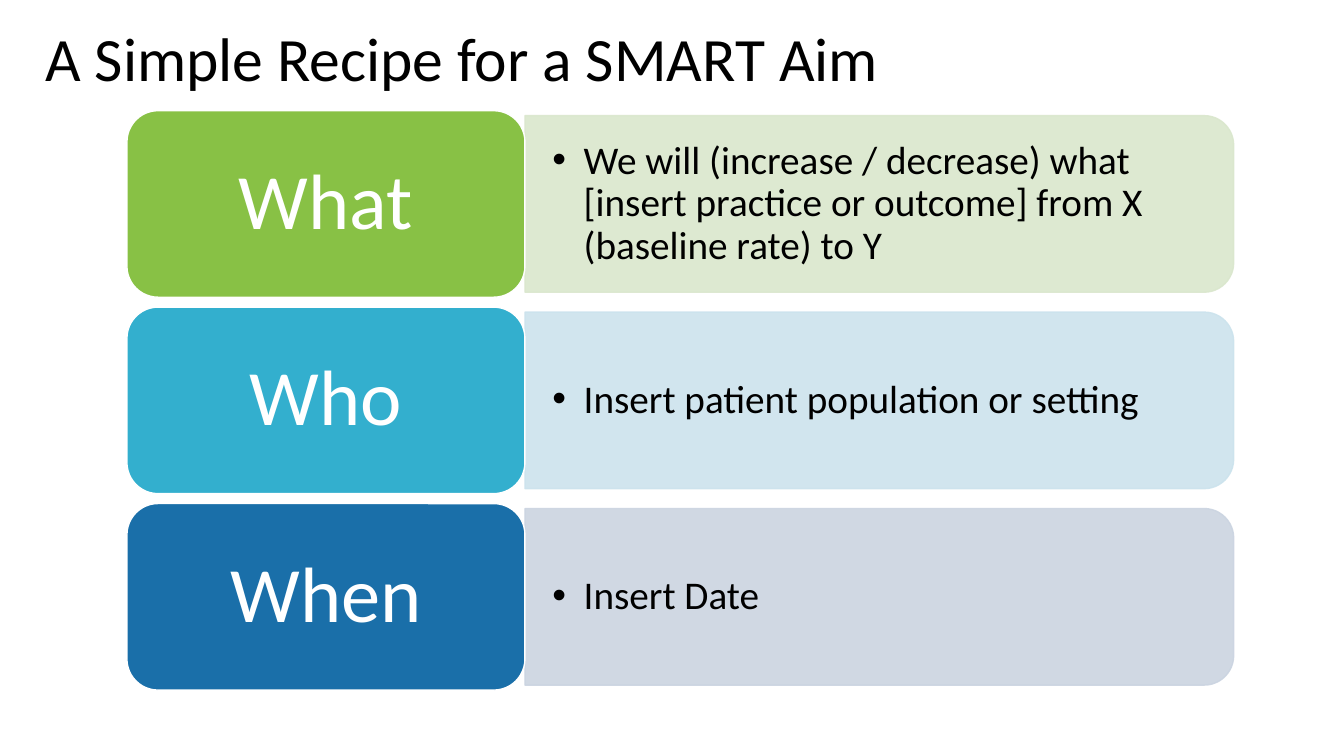
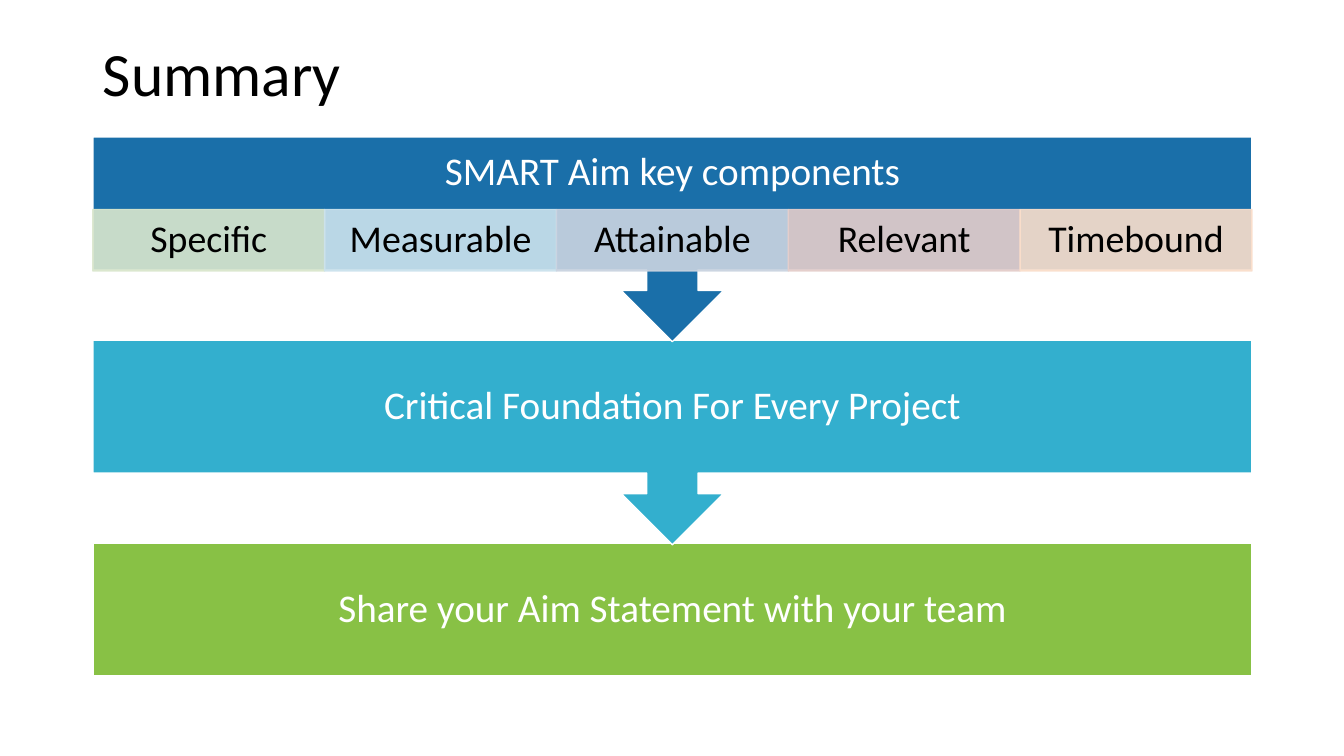
from dataclasses import dataclass
from typing import Any, NamedTuple, Optional

from lxml.etree import SubElement
from pptx import Presentation
from pptx.dml.color import RGBColor
from pptx.enum.shapes import MSO_SHAPE as Preset
from pptx.enum.text import MSO_ANCHOR as Anchor, MSO_AUTO_SIZE as AutoSize, PP_ALIGN as Align
from pptx.oxml.ns import qn
from pptx.util import Cm, Pt

FONT = "Calibri"
BLACK, WHITE = "000000", "FFFFFF"
GREEN, TEAL, BLUE = "88C145", "33AFCE", "1A6FA9"
PALE_GREEN, PALE_TEAL, PALE_BLUE = "DAE7CD", "CCE3ED", "CBD4E1"
PALE_RED, PALE_ORANGE = "E5CECB", "FADECB"
CORNER = 0.167
TINT_OPACITY = 90


class Box(NamedTuple):
    left: float
    top: float
    width: float
    height: float

    def lengths(self) -> list[Cm]:
        return [Cm(value) for value in self]


class Margins(NamedTuple):
    left: float
    top: float
    right: float
    bottom: float


@dataclass(frozen=True)
class TextStyle:
    size: float
    color: str
    margins: Margins
    align: Align = Align.CENTER
    anchor: Anchor = Anchor.MIDDLE
    spacing: float = 0.9
    bullet_indent: float = 0


@dataclass(frozen=True)
class RecipeStep:
    label: str
    detail: str
    color: str
    tint: str


@dataclass(frozen=True)
class Component:
    label: str
    tint: str


@dataclass(frozen=True)
class Stage:
    text: str
    color: str
    preset: Preset
    height: float
    adjustments: tuple[float, ...] = ()
    reserved: float = 0


COMPONENT_HEIGHT = 1.55
BLOCK_HEIGHT, CALLOUT_HEIGHT = 3.35, 5.16
CALLOUT = (0.25, 0.25, 0.25, 0.65)

TITLE_MARGINS = Margins(0.25, 0.13, 0.25, 0.13)
LABEL_STYLE = TextStyle(56, WHITE, Margins(0.8, 0.5, 0.8, 0.5))
DETAIL_STYLE = TextStyle(28, BLACK, Margins(0.69, 0.36, 0.69, 0.36), Align.LEFT, bullet_indent=0.79)
COMPONENT_STYLE = TextStyle(27, BLACK, Margins(0.53, 0.1, 0.53, 0.1))

STEPS = [
    RecipeStep("What", "We will (increase / decrease) what [insert practice or outcome] "
               "from X (baseline rate) to Y", GREEN, PALE_GREEN),
    RecipeStep("Who", "Insert patient population or setting", TEAL, PALE_TEAL),
    RecipeStep("When", "Insert Date", BLUE, PALE_BLUE),
]
COMPONENTS = [
    Component("Specific", PALE_GREEN),
    Component("Measurable", PALE_TEAL),
    Component("Attainable", PALE_BLUE),
    Component("Relevant", PALE_RED),
    Component("Timebound", PALE_ORANGE),
]
STAGES = [
    Stage("SMART Aim key components", BLUE, Preset.DOWN_ARROW_CALLOUT, CALLOUT_HEIGHT,
          CALLOUT, COMPONENT_HEIGHT),
    Stage("Critical Foundation For Every Project", TEAL, Preset.DOWN_ARROW_CALLOUT,
          CALLOUT_HEIGHT, CALLOUT),
    Stage("Share your Aim Statement with your team", GREEN, Preset.RECTANGLE, BLOCK_HEIGHT),
]


def rgb(color: str) -> RGBColor:
    return RGBColor.from_string(color)


def set_values(target: Any, values: dict[str, Any]) -> None:
    for name, value in values.items():
        setattr(target, name, value)


def write_text(shape: Any, text: str, style: TextStyle) -> None:
    frame = shape.text_frame
    frame.text = text
    set_values(frame, {"word_wrap": True, "auto_size": AutoSize.NONE,
                       "vertical_anchor": style.anchor})
    for side, margin in zip(Margins._fields, style.margins):
        setattr(frame, f"margin_{side}", Cm(margin))
    paragraph = frame.paragraphs[0]
    set_values(paragraph, {"alignment": style.align, "line_spacing": style.spacing})
    font = paragraph.runs[0].font
    set_values(font, {"name": FONT, "size": Pt(style.size)})
    font.color.rgb = rgb(style.color)
    if style.bullet_indent:
        properties = paragraph._p.get_or_add_pPr()
        indent = Cm(style.bullet_indent)
        properties.set("marL", str(indent))
        properties.set("indent", str(-indent))
        SubElement(properties, qn("a:buFont")).set("typeface", "Arial")
        SubElement(properties, qn("a:buChar")).set("char", "•")


def add_block(slide: Any, preset: Preset, box: Box, color: str, line_color: str = WHITE,
              adjustments: tuple[float, ...] = (), opacity: int = 100) -> Any:
    shape = slide.shapes.add_shape(preset, *box.lengths())
    shape.shadow.inherit = False
    shape.fill.solid()
    shape.fill.fore_color.rgb = rgb(color)
    shape.line.color.rgb = rgb(line_color)
    shape.line.width = Pt(1)
    for index, value in enumerate(adjustments):
        shape.adjustments[index] = value
    if opacity < 100:
        properties = shape._element.spPr
        for fill in (properties.find(qn("a:solidFill")), properties.find(qn("a:ln"))):
            color_element = next(fill.iter(qn("a:srgbClr")))
            SubElement(color_element, qn("a:alpha")).set("val", str(opacity * 1000))
    return shape


def add_titled_slide(presentation: Any, title: str, box: Box, anchor: Anchor) -> Any:
    slide = presentation.slides.add_slide(presentation.slide_layouts[5])
    shape = slide.shapes.title
    set_values(shape, dict(zip(Box._fields, box.lengths())))
    spacing = 1.0 if anchor == Anchor.TOP else 0.9
    write_text(shape, title, TextStyle(44, BLACK, TITLE_MARGINS, Align.LEFT, anchor, spacing))
    return slide


def build_recipe(presentation: Any) -> None:
    slide = add_titled_slide(presentation, "A Simple Recipe for a SMART Aim",
                             Box(0.89, 0.38, 23.32, 2.13), Anchor.TOP)
    tile = Box(3.2, 2.79, 10.03, 4.7)
    pitch = 4.95
    panel_width, panel_height, text_width = 17.86, 4.45, 17.63
    panel_left = tile.left + tile.width
    for index, step in enumerate(STEPS):
        top = tile.top + index * pitch
        middle = top + tile.height / 2
        upright = Box(panel_left + (panel_width - panel_height) / 2, middle - panel_width / 2,
                      panel_height, panel_width)
        panel = add_block(slide, Preset.ROUND_2_SAME_RECTANGLE, upright, step.tint, step.tint,
                          (CORNER, 0), TINT_OPACITY)
        panel.rotation = 90
        text_box = Box(panel_left, middle - panel_height / 2, text_width, panel_height)
        write_text(slide.shapes.add_textbox(*text_box.lengths()), step.detail, DETAIL_STYLE)
        label = add_block(slide, Preset.ROUNDED_RECTANGLE, tile._replace(top=top), step.color,
                          adjustments=(CORNER,))
        write_text(label, step.label, LABEL_STYLE)


def build_summary(presentation: Any) -> None:
    left, width = 2.34, 29.21
    slide = add_titled_slide(presentation, "Summary", Box(left, 0.08, width, 3.68), Anchor.MIDDLE)
    first_top, pitch = 3.45, 5.12
    for index, stage in reversed(list(enumerate(STAGES))):
        box = Box(left, first_top + index * pitch, width, stage.height)
        block = add_block(slide, stage.preset, box, stage.color, adjustments=stage.adjustments)
        margins = Margins(0.56, 0, 0.56, stage.reserved)
        write_text(block, stage.text, TextStyle(28, WHITE, margins))
    cell_width = width / len(COMPONENTS)
    cell_top = first_top + BLOCK_HEIGHT - COMPONENT_HEIGHT + 0.03
    for index, component in enumerate(COMPONENTS):
        box = Box(left + index * cell_width, cell_top, cell_width, COMPONENT_HEIGHT)
        cell = add_block(slide, Preset.RECTANGLE, box, component.tint, component.tint,
                         opacity=TINT_OPACITY)
        write_text(cell, component.label, COMPONENT_STYLE)


def main() -> None:
    presentation = Presentation()
    set_values(presentation, {"slide_width": Cm(33.87), "slide_height": Cm(19.05)})
    build_recipe(presentation)
    build_summary(presentation)
    presentation.save("out.pptx")


if __name__ == "__main__":
    main()
